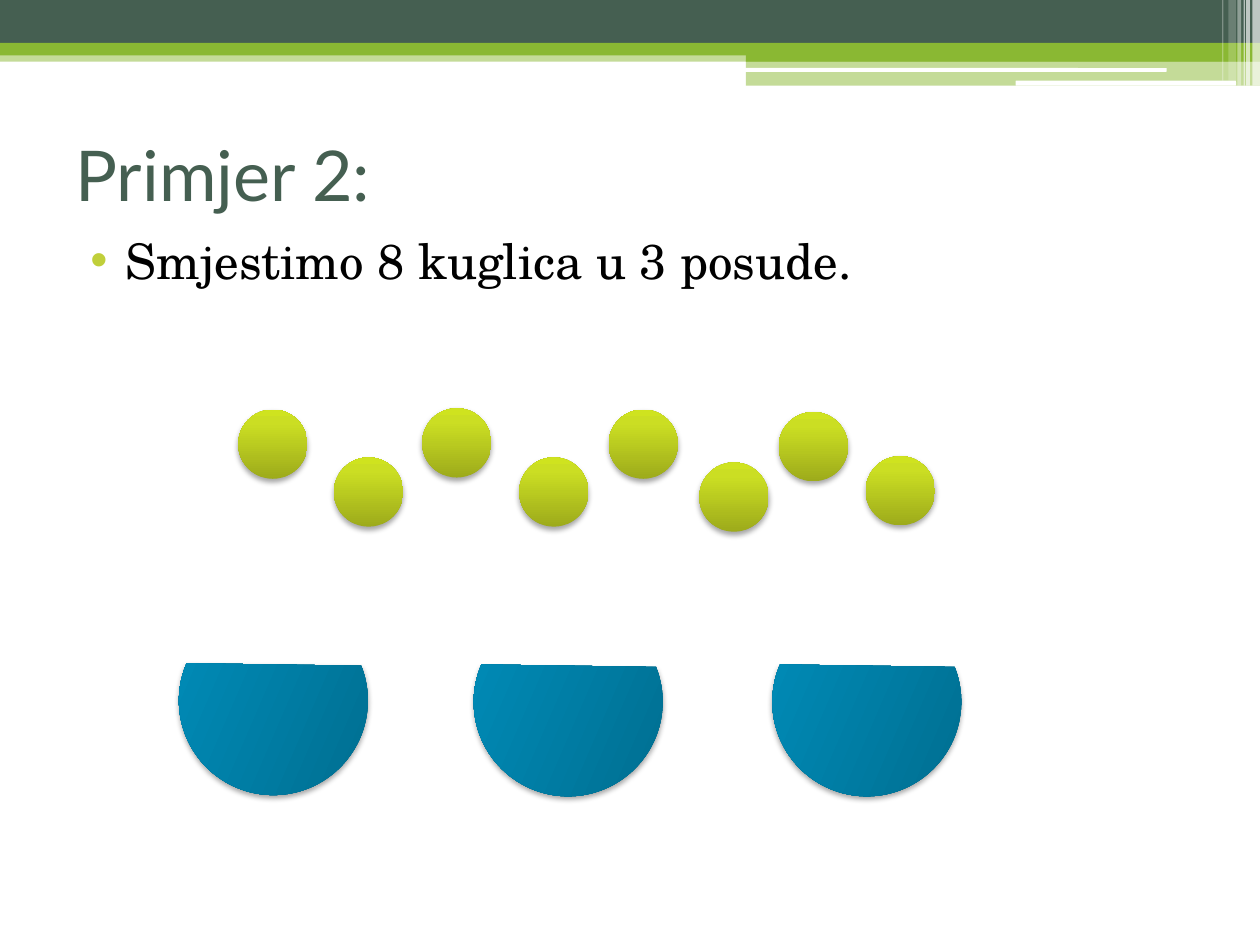
from lxml import etree
from pptx import Presentation
from pptx.dml.color import RGBColor
from pptx.enum import shapes, text
from pptx.oxml import ns, parse_xml
from pptx.util import Inches, Pt

DARK_GREEN = RGBColor(0x45, 0x5F, 0x51)
GREEN = RGBColor(0x8A, 0xB8, 0x33)
LIME = RGBColor(0xC0, 0xCF, 0x3A)
WHITE = RGBColor(0xFF, 0xFF, 0xFF)
BLACK = RGBColor(0x00, 0x00, 0x00)
BALL_STOPS = [(0, RGBColor(0x9D, 0xAB, 0x1B)), (80, RGBColor(0xCB, 0xDE, 0x23)),
              (100, RGBColor(0xCF, 0xE3, 0x1F))]
BOWL_STOPS = [(0, RGBColor(0x00, 0x6A, 0x8B)), (80, RGBColor(0x00, 0x89, 0xB4)),
              (100, RGBColor(0x00, 0x8A, 0xB5))]

RECTANGLE = shapes.MSO_SHAPE.RECTANGLE
ROUNDED = shapes.MSO_SHAPE.ROUNDED_RECTANGLE

TITLE = "Primjer 2:"
TASK = "Smjestimo 8 kuglica u 3 posude."

# kind, (left, top, width, height), colour, opacity in percent
HEADER_BANDS = [
    (RECTANGLE, (0, 0.4, 10, 0.09), GREEN, 50),
    (RECTANGLE, (0, 0, 10, 0.34), DARK_GREEN, 100),
    (RECTANGLE, (0, 0.34, 10, 0.1), GREEN, 100),
    (RECTANGLE, (5.92, 0.39, 4.08, 0.1), GREEN, 100),
    (RECTANGLE, (5.92, 0.48, 4.08, 0.2), GREEN, 50),
    (ROUNDED, (5.91, 0.54, 3.35, 0.03), WHITE, 100),
    (ROUNDED, (8.06, 0.64, 1.75, 0.04), WHITE, 100),
]
# left, width, height, opacity in percent
CORNER_STRIPES = [
    (9.94, 0.06, 0.68, 65), (9.89, 0.03, 0.68, 65), (9.87, 0.01, 0.68, 60),
    (9.82, 0.03, 0.68, 40), (9.75, 0.06, 0.64, 20), (9.7, 0.01, 0.64, 30),
]
BOWL_SIZE, BOWL_ROTATION = 1.5, 293.3
BOWLS = [(1.42, 4.81), (3.76, 4.82), (6.13, 4.82)]
BALL_SIZE = 0.55
BALLS = [(1.89, 3.25), (3.35, 3.24), (4.83, 3.25), (6.18, 3.27),
         (6.87, 3.62), (2.65, 3.63), (4.12, 3.63), (5.55, 3.67)]


def add_plain_shape(slide, kind, box):
    """Add a preset shape without outline or shadow."""
    shape = slide.shapes.add_shape(kind, *map(Inches, box))
    shape.line.fill.background()
    shape.shadow.inherit = False
    return shape


def add_band(slide, kind, box, colour, opacity):
    shape = add_plain_shape(slide, kind, box)
    shape.fill.solid()
    shape.fill.fore_color.rgb = colour
    if opacity < 100:
        colour_node = shape._element.spPr.find(".//" + ns.qn("a:srgbClr"))
        etree.SubElement(colour_node, ns.qn("a:alpha"), val=str(opacity * 1000))


def add_glossy_shape(slide, kind, position, size, stops, rotation=0):
    """Add a shape with an upward gradient and a soft shadow below it."""
    shape = add_plain_shape(slide, kind, (*position, size, size))
    shape.rotation = rotation
    properties = shape._element.spPr
    stop_xml = "".join(f'<a:gs pos="{place * 1000}"><a:srgbClr val="{colour}"/></a:gs>'
                       for place, colour in stops)
    gradient = parse_xml(
        f'<a:gradFill {ns.nsdecls("a")} rotWithShape="1"><a:gsLst>{stop_xml}</a:gsLst>'
        '<a:lin ang="16200000" scaled="0"/></a:gradFill>')
    properties.find(ns.qn("a:prstGeom")).addnext(gradient)
    properties.find(ns.qn("a:effectLst")).append(parse_xml(
        f'<a:outerShdw {ns.nsdecls("a")} blurRad="{Pt(3.1)}" dist="{Pt(1.8)}" '
        'dir="5400000" rotWithShape="0"><a:srgbClr val="000000">'
        '<a:alpha val="35000"/></a:srgbClr></a:outerShdw>'))


def write_text(shape, content, *, size, font, colour, anchor, space_before=0, bullet=None):
    frame = shape.text_frame
    frame.word_wrap = True
    frame.auto_size = text.MSO_AUTO_SIZE.NONE
    frame.vertical_anchor = anchor
    paragraph = frame.paragraphs[0]
    paragraph.alignment = text.PP_ALIGN.LEFT
    paragraph.space_before = Pt(space_before)
    run = paragraph.add_run()
    run.text = content
    run.font.size = Pt(size)
    run.font.name = font
    run.font.color.rgb = colour
    if bullet:
        properties = paragraph._p.get_or_add_pPr()
        properties.set("marL", str(Inches(0.4)))
        properties.set("indent", str(Inches(-0.28)))
        bullet_colour = etree.SubElement(properties, ns.qn("a:buClr"))
        etree.SubElement(bullet_colour, ns.qn("a:srgbClr"), val=str(LIME))
        etree.SubElement(properties, ns.qn("a:buFont"), typeface="Arial")
        etree.SubElement(properties, ns.qn("a:buChar"), char=bullet)


def main():
    presentation = Presentation()
    presentation.slide_width, presentation.slide_height = Inches(10), Inches(7.5)
    slide = presentation.slides.add_slide(presentation.slide_layouts[5])

    for band in HEADER_BANDS:
        add_band(slide, *band)
    for left, width, height, opacity in CORNER_STRIPES:
        add_band(slide, RECTANGLE, (left, 0, width, height), WHITE, opacity)

    title = slide.shapes.title
    title.left, title.top, title.width, title.height = map(Inches, (0.5, 0.79, 9, 1.17))
    write_text(title, TITLE, size=40, font="Lato", colour=DARK_GREEN,
               anchor=text.MSO_ANCHOR.MIDDLE)
    task = slide.shapes.add_textbox(*map(Inches, (0.5, 1.78, 9, 4.49)))
    write_text(task, TASK, size=28, font="TeX Gyre Schola", colour=BLACK,
               anchor=text.MSO_ANCHOR.TOP, space_before=3, bullet="•")

    for position in BOWLS:
        add_glossy_shape(slide, shapes.MSO_SHAPE.CHORD, position, BOWL_SIZE,
                         BOWL_STOPS, BOWL_ROTATION)
    for position in BALLS:
        add_glossy_shape(slide, shapes.MSO_SHAPE.OVAL, position, BALL_SIZE, BALL_STOPS)

    presentation.save("out.pptx")


if __name__ == "__main__":
    main()
